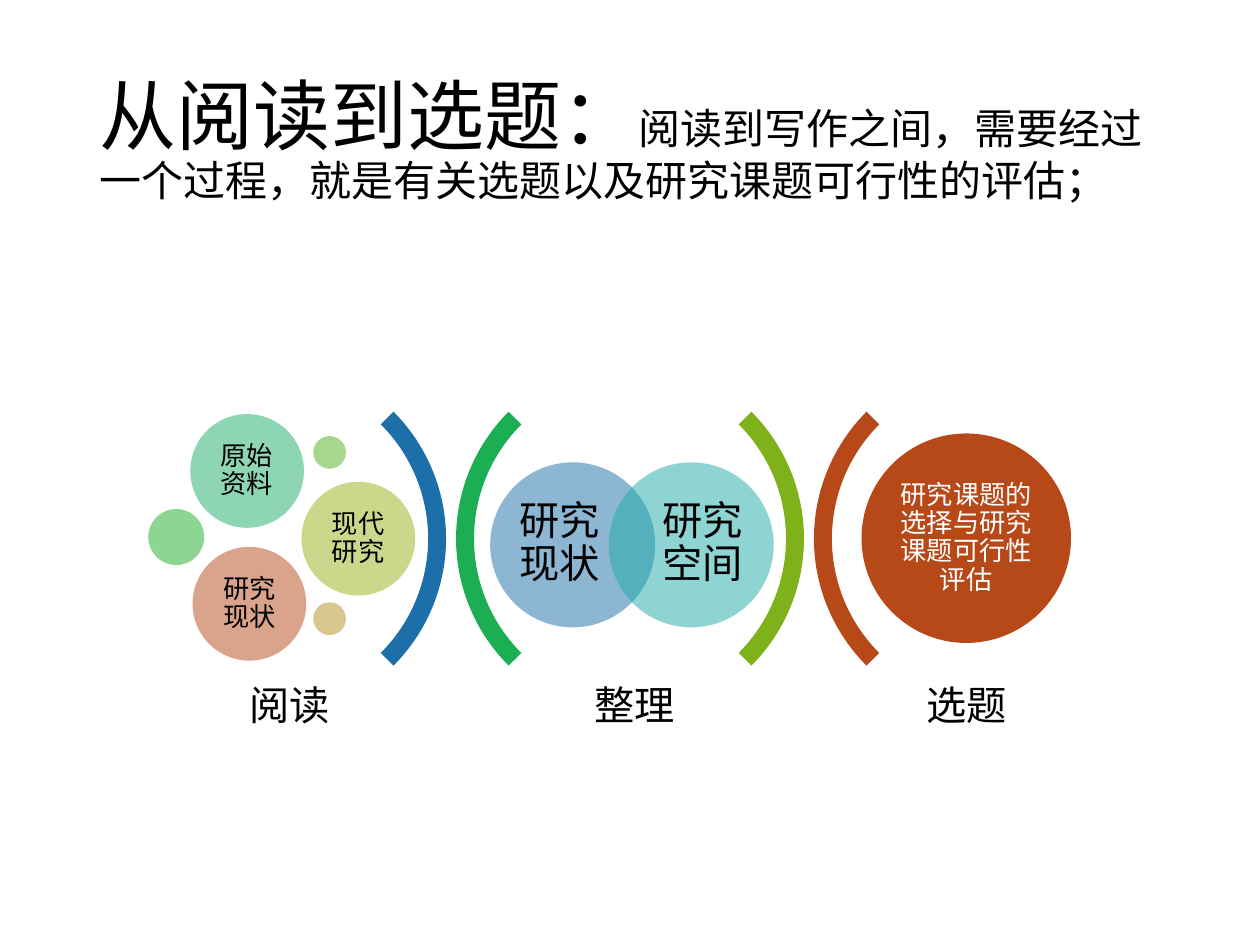
from pptx import Presentation
from pptx.dml.color import RGBColor
from pptx.enum.shapes import MSO_SHAPE as Shape
from pptx.enum.text import MSO_ANCHOR as Anchor, MSO_AUTO_SIZE as AutoSize, PP_ALIGN as Align
from pptx.oxml.ns import qn
from pptx.util import Pt
from lxml.etree import SubElement

FONT = "Times New Roman"
BLACK, WHITE = "000000", "FFFFFF"
TITLE = [("从阅读到选题：", 44), ("阅读到写作之间，需要经过一个过程，就是有关选题以及研究课题可行性的评估；", 24)]

ARC_TOP, ARC_SIZE = 205.2, 205.2
ARCS = [(49.7, 90, "1D6FA9"), (260.6, 270, "1CAE53"),
        (254.2, 90, "7FB21A"), (465.1, 270, "B74919")]

STAGE_TOP, STAGE_WIDTH, STAGE_HEIGHT = 383.8, 155.5, 41
STAGES = [("阅读", 87.8), ("整理", 285.1), ("选题", 474.5)]

CIRCLES = [
    (280.1, 264.2, 94.3, "1D6FA9", 50),
    (347.8, 264.2, 94.3, "1CABA7", 50),
    (108.7, 236.6, 65, "1CAD68", 50),
    (84.7, 290.9, 32, "1BAF27", 50),
    (179, 249.2, 18.7, "51B11B", 50),
    (172.3, 275.3, 65, "96B31A", 50),
    (179, 344.2, 18.7, "B58E1A", 50),
    (110, 312.5, 65, "B74919", 50),
    (492.3, 247.7, 119.7, "B74919", 100),
]

CIRCLE_TEXTS = [
    ("研究现状", 293, 275, 54, 72, 0, 23, BLACK),
    ("研究空间", 374.4, 275, 54, 72, 0, 23, BLACK),
    ("原始资料", 118.1, 246.2, 46, 46, 4, 15, BLACK),
    ("现代研究", 181.6, 284.9, 46, 46, 4, 15, BLACK),
    ("研究现状", 119.5, 322, 46, 46, 4, 15, BLACK),
    ("研究课题的选择与研究课题可行性评估", 509.8, 265.3, 84.7, 84.7, 4, 15, WHITE),
]


def rgb(color):
    return RGBColor.from_string(color)


def place(shape, left, top, width, height):
    shape.left, shape.top, shape.width, shape.height = map(Pt, (left, top, width, height))


def add_figure(slide, kind, left, top, size, color, opacity=100):
    figure = slide.shapes.add_shape(kind, Pt(left), Pt(top), Pt(size), Pt(size))
    figure.shadow.inherit = False
    figure.fill.solid()
    figure.fill.fore_color.rgb = rgb(color)
    figure.line.fill.background()
    if opacity < 100:
        srgb = figure.fill._xPr.find(qn("a:solidFill")).find(qn("a:srgbClr"))
        SubElement(srgb, qn("a:alpha")).set("val", str(opacity * 1000))
    return figure


def add_label(slide, text, left, top, width, height, inset, size, color):
    frame = slide.shapes.add_textbox(Pt(left), Pt(top), Pt(width), Pt(height)).text_frame
    frame.word_wrap = True
    frame.vertical_anchor = Anchor.MIDDLE
    frame.margin_left = frame.margin_right = frame.margin_top = frame.margin_bottom = Pt(inset)
    paragraph = frame.paragraphs[0]
    paragraph.text = text
    paragraph.alignment = Align.CENTER
    paragraph.line_spacing = 0.9
    paragraph.font.name = FONT
    paragraph.font.size = Pt(size)
    paragraph.font.color.rgb = rgb(color)


def add_title(slide):
    title = slide.shapes.title
    place(title, 49.5, 28.8, 621, 104.4)
    frame = title.text_frame
    frame.word_wrap = True
    frame.auto_size = AutoSize.NONE
    frame.vertical_anchor = Anchor.MIDDLE
    paragraph = frame.paragraphs[0]
    paragraph.alignment = Align.LEFT
    paragraph.line_spacing = 0.9
    paragraph.font.name = FONT
    paragraph.font.color.rgb = rgb(BLACK)
    for text, size in TITLE:
        run = paragraph.add_run()
        run.text = text
        run.font.size = Pt(size)


def main():
    deck = Presentation()
    deck.slide_width, deck.slide_height = Pt(720), Pt(540)
    slide = deck.slides.add_slide(deck.slide_layouts[5])
    add_title(slide)
    for left, rotation, color in ARCS:
        arc = add_figure(slide, Shape.BLOCK_ARC, left, ARC_TOP, ARC_SIZE, color)
        arc.rotation = rotation
        for index, value in enumerate((135, 189, 0.05)):
            arc.adjustments[index] = value
    for circle in CIRCLES:
        add_figure(slide, Shape.OVAL, *circle)
    for label in CIRCLE_TEXTS:
        add_label(slide, *label)
    for text, left in STAGES:
        add_label(slide, text, left, STAGE_TOP, STAGE_WIDTH, STAGE_HEIGHT, 7.2, 23, BLACK)
    deck.save("out.pptx")


if __name__ == "__main__":
    main()
